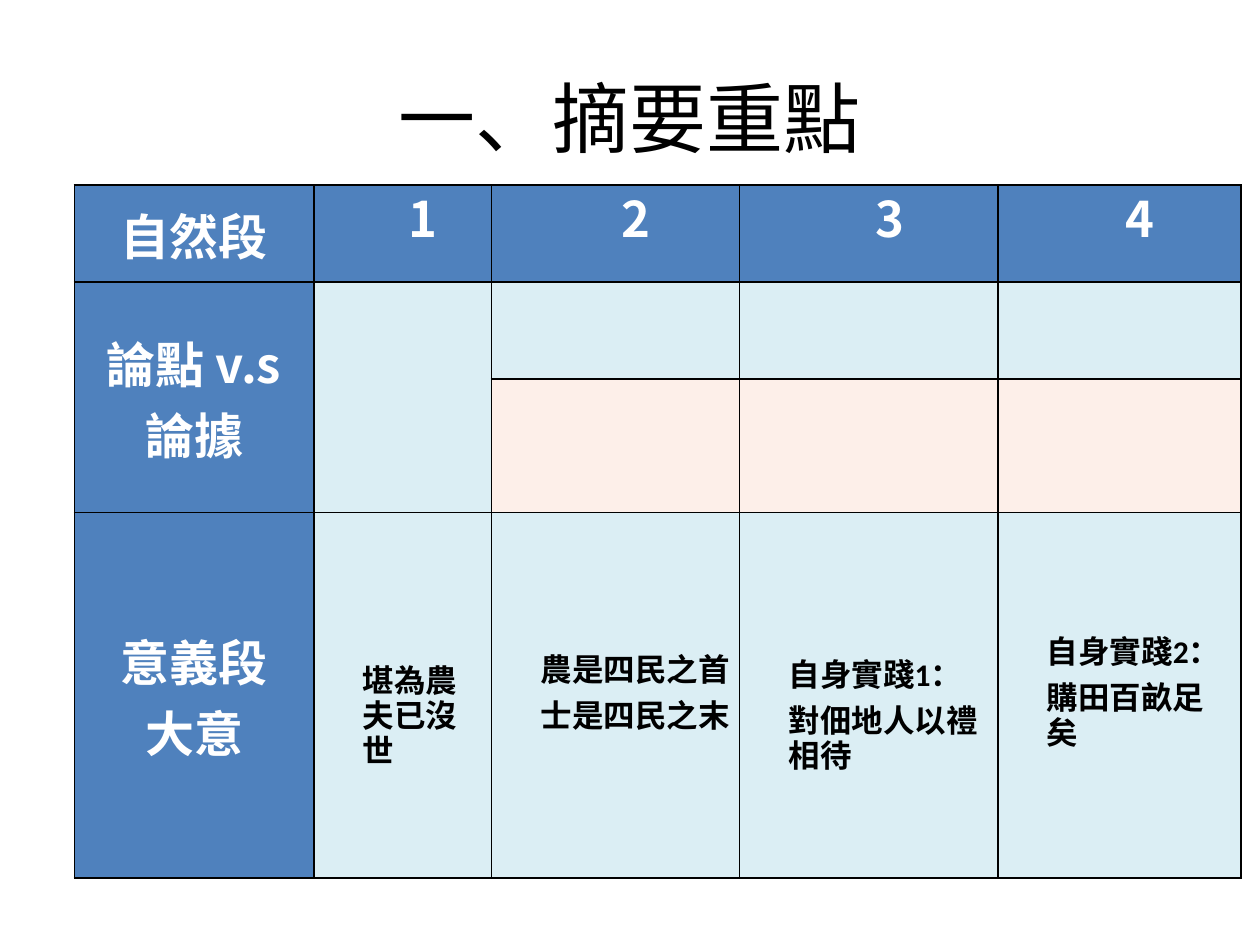
from lxml import etree
from pptx import Presentation
from pptx.dml.color import RGBColor
from pptx.enum import text
from pptx.oxml.ns import qn
from pptx.util import Inches, Pt

# Content
TITLE = ["一", "、", "摘要重點"]
HEADERS = ["自然段", "1", "2", "3", "4"]
ROW_LABELS = {1: ["論點 v.s", "論據"], 3: ["意義段", "大意"]}
SUMMARIES = [
    [["堪為農夫已沒世"]],
    [["農是四民之首"], ["士是四民之末"]],
    [["自身實踐1", "："], ["對佃地人以禮相待"]],
    [["自身實踐2", "："], ["購田百畝足矣"]],
]
LOWERED = {1, 3}  # columns whose summary sits one line lower

# Theme
THEME = {
    "latin": "Calibri", "cjk": "Noto Sans CJK SC",
    "black": "000000", "white": "FFFFFF",
    "header": "4F81BD", "claim": "DBEEF4", "evidence": "FDEFE9",
    "title_size": 44, "head_size": 28, "body_size": 18, "border": 1,
}
COLUMNS = [1.9, 1.41, 1.97, 2.05, 1.93]
ROWS = [0.77, 0.77, 1.06, 2.9]
LINE, AFTER = Pt(20), Pt(6)


def add_span(para, words, face, size, color, bold=False):
    span = para.add_run()
    span.text = words
    formats = {"name": face, "size": Pt(size), "bold": bold}
    for key, value in formats.items():
        setattr(span.font, key, value)
    span.font.color.rgb = RGBColor.from_string(color)
    east = etree.SubElement(span.font._element, qn("a:ea"))
    east.set("typeface", face)


def face_for(words):
    return THEME["cjk"] if words in ("、", "：") else THEME["latin"]


def indent(para):
    para.line_spacing, para.space_after = LINE, AFTER
    props = para._p.get_or_add_pPr()
    props.set("marL", str(Inches(0.33)))
    props.set("indent", "0")


def paragraphs(cell, count):
    frame = cell.text_frame
    for _ in range(count - 1):
        frame.add_paragraph()
    return frame.paragraphs


def write_heading(cell, lines, indented=False):
    for para, words in zip(paragraphs(cell, len(lines)), lines):
        para.alignment = text.PP_ALIGN.CENTER
        if indented:
            indent(para)
        add_span(para, words, THEME["cjk"], THEME["head_size"], THEME["white"], True)


def write_summary(cell, lines):
    for para, pieces in zip(paragraphs(cell, len(lines)), lines):
        para.alignment = text.PP_ALIGN.LEFT
        indent(para)
        for words in pieces:
            add_span(para, words, face_for(words), THEME["body_size"], THEME["black"], True)


def style_cell(cell, color):
    formats = {
        "margin_left": Inches(0.06), "margin_right": Inches(0.06),
        "margin_top": 0, "margin_bottom": 0,
        "vertical_anchor": text.MSO_ANCHOR.MIDDLE,
    }
    for key, value in formats.items():
        setattr(cell, key, value)
    # Borders come before the fill in the cell properties
    props = cell._tc.get_or_add_tcPr()
    for side in ("lnL", "lnR", "lnT", "lnB"):
        line = etree.SubElement(props, qn(f"a:{side}"), w=str(Pt(THEME["border"])))
        fill = etree.SubElement(line, qn("a:solidFill"))
        etree.SubElement(fill, qn("a:srgbClr"), val=THEME["black"])
    cell.fill.solid()
    cell.fill.fore_color.rgb = RGBColor.from_string(color)


def cell_color(row, column):
    if row == 0 or column == 0:
        return THEME["header"]
    return THEME["evidence"] if row == 2 and column > 1 else THEME["claim"]


def main():
    deck = Presentation()
    deck.slide_width, deck.slide_height = Inches(10), Inches(7.5)
    page = deck.slides.add_slide(deck.slide_layouts[5])

    # Title
    title = page.shapes.title
    title.left, title.top, title.width, title.height = map(Inches, (0.5, 0.3, 9, 1.25))
    title.text_frame.vertical_anchor = text.MSO_ANCHOR.MIDDLE
    heading = title.text_frame.paragraphs[0]
    heading.alignment = text.PP_ALIGN.CENTER
    for words in TITLE:
        add_span(heading, words, face_for(words), THEME["title_size"], THEME["black"])

    # Table grid
    table = page.shapes.add_table(
        len(ROWS), len(COLUMNS), Inches(0.59), Inches(1.47),
        Inches(sum(COLUMNS)), Inches(sum(ROWS))).table
    for column, width in zip(table.columns, COLUMNS):
        column.width = Inches(width)
    for row, height in zip(table.rows, ROWS):
        row.height = Inches(height)
    for row in range(len(ROWS)):
        for column in range(len(COLUMNS)):
            style_cell(table.cell(row, column), cell_color(row, column))
    for column in (0, 1):
        table.cell(1, column).merge(table.cell(2, column))

    # Table text
    for column, words in enumerate(HEADERS):
        write_heading(table.cell(0, column), [words], indented=column > 0)
    for row, lines in ROW_LABELS.items():
        write_heading(table.cell(row, 0), lines)
    for column, lines in enumerate(SUMMARIES, start=1):
        cell = table.cell(3, column)
        write_summary(cell, lines)
        if column in LOWERED:
            cell.margin_top = LINE + AFTER

    deck.save("out.pptx")


if __name__ == "__main__":
    main()
